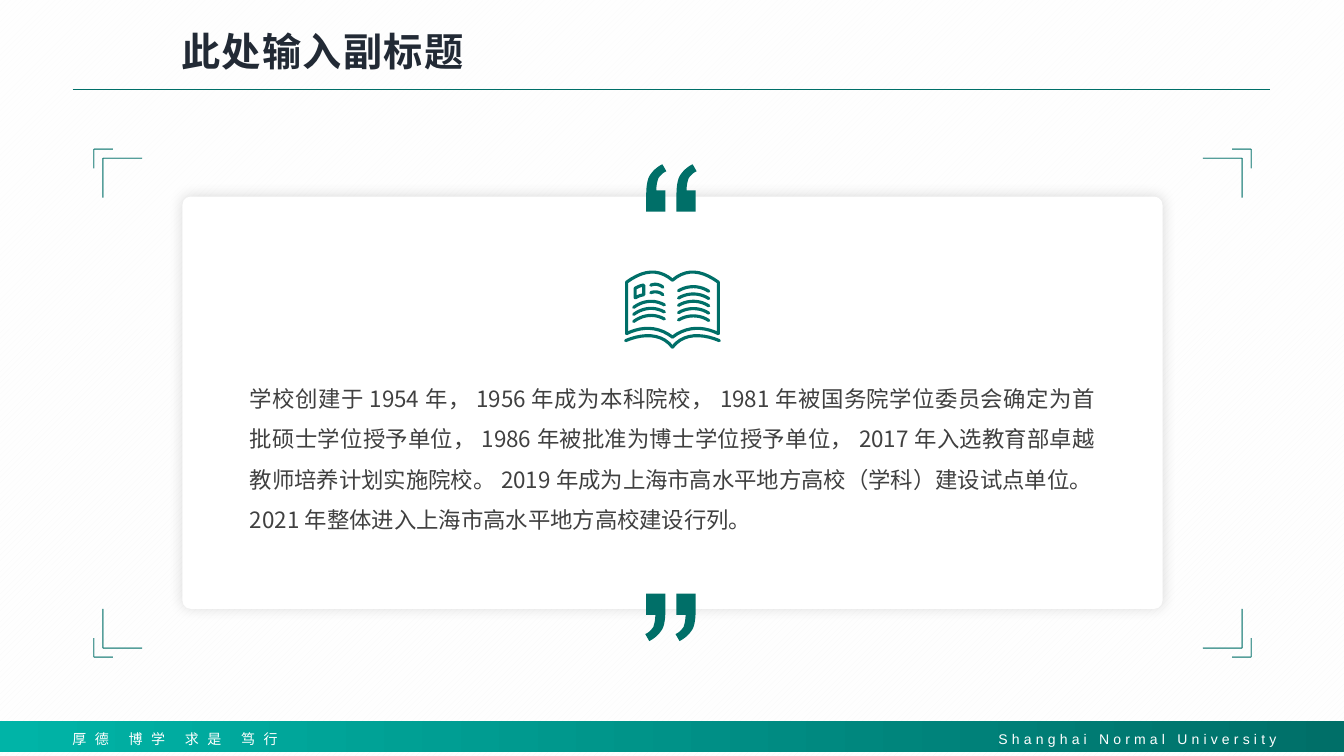
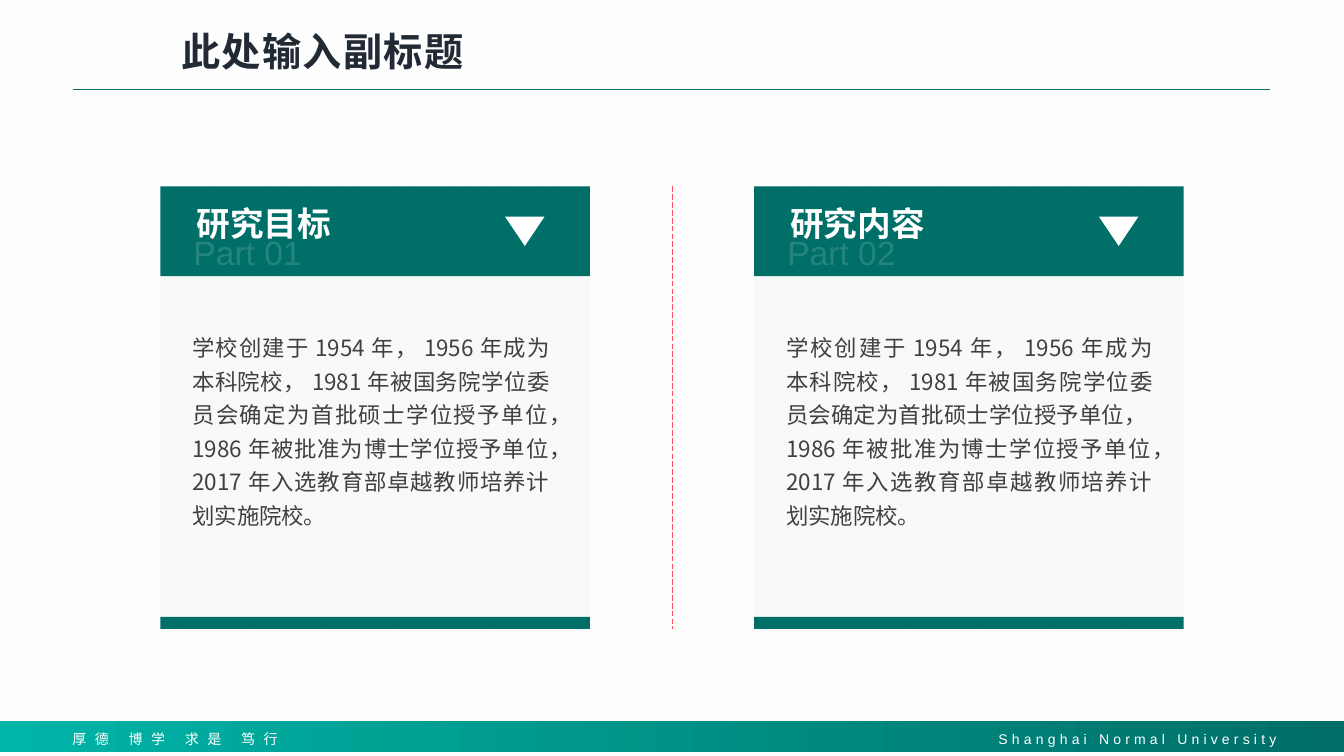
"""Build two university slides: a framed quotation and a pair of topic cards."""
from dataclasses import dataclass
from itertools import cycle

from lxml.etree import SubElement
from pptx import Presentation
from pptx.dml.color import RGBColor
from pptx.enum.dml import MSO_LINE, MSO_PATTERN
from pptx.enum.shapes import MSO_CONNECTOR, MSO_SHAPE
from pptx.enum.text import MSO_ANCHOR, MSO_AUTO_SIZE, PP_ALIGN
from pptx.oxml.ns import qn
from pptx.util import Pt

PX = 9144
W, H = 1333, 750


@dataclass(frozen=True)
class Theme:
    green: str = "006F68"
    teal: str = "00B4A7"
    red: str = "FE4F5A"
    white: str = "FFFFFF"
    grey: str = "F2F2F2"
    ink: str = "404040"
    navy: str = "222A35"
    black: str = "000000"
    cjk: str = "Noto Sans CJK SC"
    latin: str = "Arial"
    title: int = 28
    heading: int = 24
    body: int = 16
    footer: int = 10


T = Theme()

TITLE = "此处输入副标题"
MOTTO = "厚德 博学 求是 笃行"
SCHOOL = "Shanghai Normal University"
HISTORY = (
    "学校创建于1954年，1956年成为本科院校，1981年被国务院学位委员会确定为首批硕士学位授予单位，"
    "1986年被批准为博士学位授予单位，2017年入选教育部卓越教师培养计划实施院校。"
)
RECENT = "2019年成为上海市高水平地方高校（学科）建设试点单位。2021年整体进入上海市高水平地方高校建设行列。"
CARDS = [("研究目标", "Part 01", 374), ("研究内容", "Part 02", 383)]

BRACKETS = [(102, 157, 39), (93, 148, 19)]

QUOTE_MARK = [
    (657, 163), (661, 170), (658, 171, 655, 174, 653, 177), (652, 180, 651, 184, 651, 189),
    (660, 189), (660, 210), (641, 210), (641, 194),
    (641, 185, 642, 179, 644, 175), (647, 170, 651, 166, 657, 163),
]
MARK_STEP = 30
MARK_TURN = (1331, 799)

SPINE = 667
HALF_BOOK = [
    [(SPINE, 278), (653, 266, 638, 268, 621.5, 280), (621.5, 331), (636, 324, 652, 323, SPINE, 334.5)],
    [(620.5, 338), (637, 331, 656, 330, SPINE, 344.5)],
]
PHOTO = [(630, 286), (634, 284, 636, 283, 638.5, 283), (638.5, 292.5), (635, 293, 633, 294, 630, 295.5), (630, 286)]
BOOK_LINES = [
    ([(628.5, 319), (638, 312, 649, 311, 659, 316.5)], 3, 7),
    ([(673, 317.5), (682, 312, 694, 312, 703, 318)], 5, 7.25),
    ([(645.5, 290.5), (650, 288.5, 655, 290, 657.5, 292.5)], 2, 7.5),
]


def px(*values):
    return [round(v * PX) for v in values]


def rgb(color):
    return RGBColor.from_string(color)


def fade(sp, *percents):
    for c, pct in zip(list(sp.element.iter(qn("a:srgbClr"))), cycle(percents)):
        SubElement(c, qn("a:alpha"), val=str(pct * 1000))


def block(s, box, fill, kind=MSO_SHAPE.RECTANGLE):
    sp = s.shapes.add_shape(kind, *px(*box))
    sp.shadow.inherit = False
    sp.fill.solid()
    sp.fill.fore_color.rgb = rgb(fill)
    sp.line.fill.background()
    return sp


def gradient(s, box, colors, angle):
    sp = block(s, box, colors[0])
    sp.fill.gradient()
    sp.fill.gradient_angle = angle
    for stop, color in zip(sp.fill.gradient_stops, colors):
        stop.color.rgb = rgb(color)
    return sp


def rule(s, start, end, color, width, dash=None):
    ln = s.shapes.add_connector(MSO_CONNECTOR.STRAIGHT, *px(*start, *end))
    ln.line.color.rgb = rgb(color)
    ln.line.width = Pt(width)
    if dash:
        ln.line.dash_style = dash
    SubElement(ln.element.spPr, qn("a:effectLst"))
    return ln


def text(s, box, words, size, color, font=T.cjk, bold=False, align=PP_ALIGN.LEFT, wrap=True,
         spacing=None, leading=None, before=None, anchor=MSO_ANCHOR.TOP, grow=True, bottom=5):
    sp = s.shapes.add_textbox(*px(*box))
    tf = sp.text_frame
    tf.word_wrap = wrap
    tf.vertical_anchor = anchor
    tf.auto_size = MSO_AUTO_SIZE.SHAPE_TO_FIT_TEXT if grow else MSO_AUTO_SIZE.NONE
    tf.margin_bottom = px(bottom)[0]
    p = tf.paragraphs[0]
    p.alignment = align
    p.line_spacing = leading
    p.space_before = before
    r = p.add_run()
    r.text = words
    r.font.size = Pt(size)
    r.font.bold = bold
    r.font.name = font
    r.font.color.rgb = rgb(color)
    props = r._r.get_or_add_rPr()
    props.set("lang", "zh-CN")
    if spacing:
        props.set("spc", str(spacing * 100))
    SubElement(props, qn("a:ea"), typeface=font)
    return sp


def flatten(contour, steps=10):
    points = [contour[0]]
    for seg in contour[1:]:
        if len(seg) == 2:
            points.append(seg)
            continue
        ctrl = [points[-1], seg[:2], seg[2:4], seg[4:]]
        for i in range(1, steps + 1):
            t = i / steps
            weights = ((1 - t) ** 3, 3 * t * (1 - t) ** 2, 3 * t * t * (1 - t), t ** 3)
            points.append(tuple(sum(w * c[k] for w, c in zip(weights, ctrl)) for k in (0, 1)))
    return points


def outline(s, contours, closed):
    contours = [[tuple(px(*pt)) for pt in points] for points in contours]
    builder = s.shapes.build_freeform(*contours[0][0], scale=1.0)
    for i, points in enumerate(contours):
        if i:
            builder.move_to(*points[0])
        builder.add_line_segments(points[1:], close=closed)
    sp = builder.convert_to_shape()
    sp.shadow.inherit = False
    return sp


def quote_mark(s, turned=False):
    points = flatten(QUOTE_MARK)
    marks = [[(x + dx, y) for x, y in points] for dx in (0, MARK_STEP)]
    if turned:
        marks = [[(MARK_TURN[0] - x, MARK_TURN[1] - y) for x, y in m] for m in marks]
    sp = outline(s, marks, True)
    sp.fill.solid()
    sp.fill.fore_color.rgb = rgb(T.green)
    sp.line.fill.background()


def book(s):
    halves = [flatten(c) for c in HALF_BOOK]
    strokes = halves + [[(2 * SPINE - x, y) for x, y in h] for h in halves]
    strokes.append(flatten(PHOTO))
    for curve, count, step in BOOK_LINES:
        points = flatten(curve)
        strokes += [[(x, y - i * step) for x, y in points] for i in range(count)]
    sp = outline(s, strokes, False)
    sp.fill.background()
    sp.line.color.rgb = rgb(T.green)
    sp.line.width = Pt(2.25)
    sp.line._get_or_add_ln().set("cap", "rnd")


def new_slide(prs):
    s = prs.slides.add_slide(prs.slide_layouts[6])
    fill = s.background.fill
    fill.patterned()
    fill.pattern = MSO_PATTERN.WIDE_UPWARD_DIAGONAL
    fill.fore_color.rgb = rgb(T.grey)
    fill.back_color.rgb = rgb(T.white)
    fade(gradient(s, (0, 0, W, H), (T.white, T.white), 270), 80, 50)
    rule(s, (72, 89), (1260, 89), T.green, 0.5)
    gradient(s, (0, 715, W, 31), (T.teal, T.green), 0)
    text(s, (62, 720, 238, 27), MOTTO, T.footer, T.white, wrap=False, spacing=6)
    text(s, (973, 720, 303, 27), SCHOOL, T.footer, T.white, font=T.latin,
         align=PP_ALIGN.RIGHT, wrap=False, spacing=3)
    text(s, (170, 17, 796, 57), TITLE, T.title, T.navy, bold=True, spacing=1,
         leading=0.9, anchor=MSO_ANCHOR.BOTTOM, grow=False, bottom=0)
    return s


def corners(s):
    for x, y, arm in BRACKETS:
        for cx, dx in ((x, arm), (W + 1 - x, -arm)):
            for cy, dy in ((y, arm), (800 - y, -arm)):
                for end in ((cx + dx, cy), (cx, cy + dy)):
                    fade(rule(s, (cx, cy), end, T.green, 1), 65)


def quotation_slide(prs):
    s = new_slide(prs)
    panel = block(s, (181, 195, 972, 409), T.white, MSO_SHAPE.ROUNDED_RECTANGLE)
    panel.adjustments[0] = 0.02
    effects = panel.element.spPr.find(qn("a:effectLst"))
    shadow = SubElement(effects, qn("a:outerShdw"), blurRad=str(Pt(10)), dist="0", dir="0",
                        algn="ctr", rotWithShape="0")
    color = SubElement(shadow, qn("a:srgbClr"), val=T.black)
    SubElement(color, qn("a:alpha"), val="15000")
    corners(s)
    quote_mark(s)
    quote_mark(s, turned=True)
    text(s, (238, 364, 858, 167), HISTORY + RECENT, T.body, T.ink,
         align=PP_ALIGN.JUSTIFY, leading=1.5)
    book(s)


def card(s, x, heading, part, text_width):
    fade(block(s, (x, 251, 426, 361), T.grey), 40)
    block(s, (x, 185, 426, 89), T.green)
    text(s, (x + 22, 320, text_width, 210), HISTORY, T.body, T.ink,
         align=PP_ALIGN.JUSTIFY, leading=1.25)
    block(s, (x, 612, 426, 12), T.green)
    fade(text(s, (x + 23, 225, 202, 50), part, T.heading, T.white, font=T.latin), 15)
    block(s, (x + 342, 215, 39, 29), T.white, MSO_SHAPE.ISOSCELES_TRIANGLE).rotation = 180
    text(s, (x + 25, 196, 155, 50), heading, T.heading, T.white, bold=True,
         align=PP_ALIGN.CENTER, wrap=False)


def topics_slide(prs):
    s = new_slide(prs)
    rule(s, (667, 185), (667, 624), T.red, 0.5, MSO_LINE.LONG_DASH)
    for i, (heading, part, text_width) in enumerate(CARDS):
        card(s, 159 + i * 589, heading, part, text_width)


def main():
    prs = Presentation()
    prs.slide_width, prs.slide_height = px(W, H)
    quotation_slide(prs)
    topics_slide(prs)
    prs.save("out.pptx")


if __name__ == "__main__":
    main()
